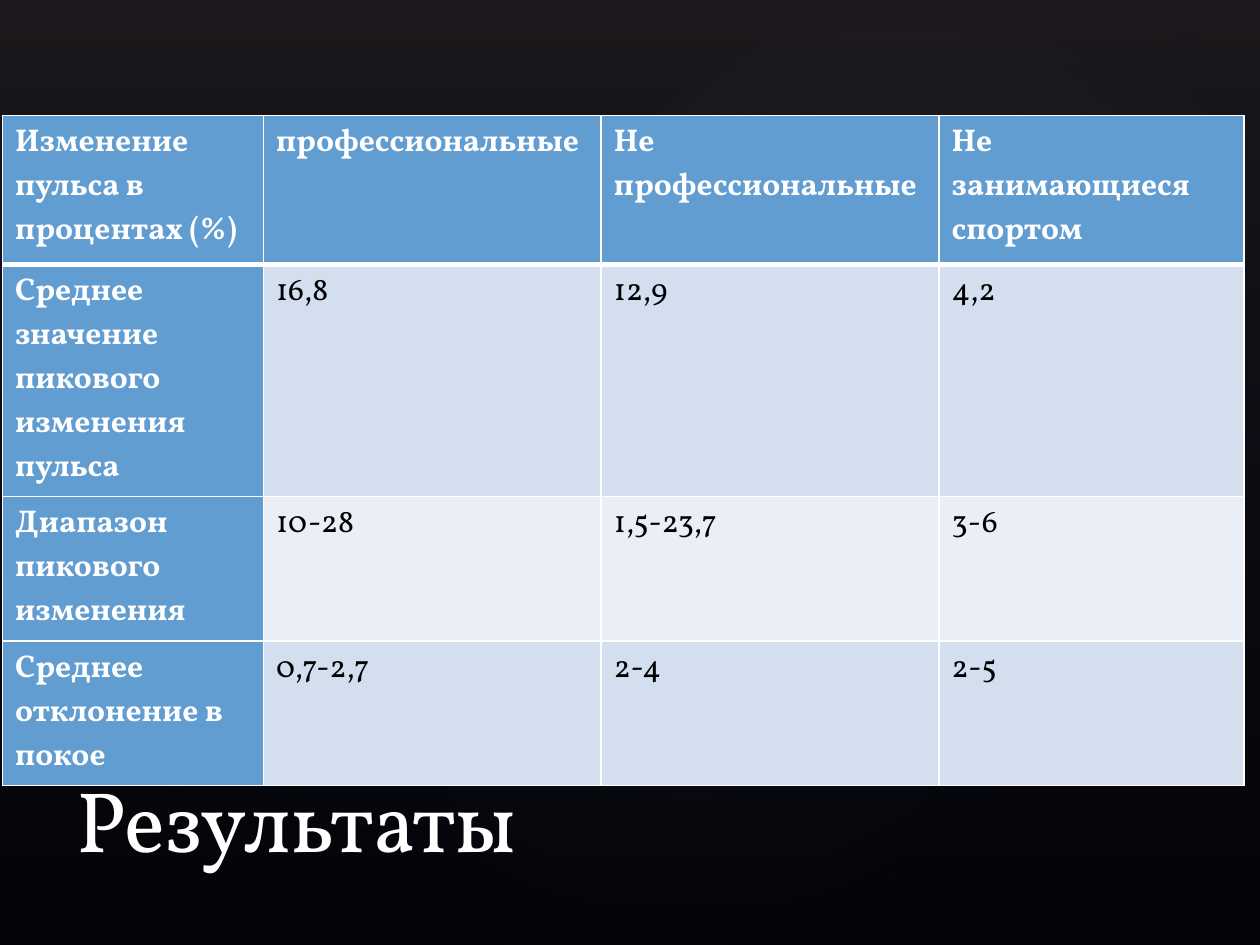
from dataclasses import dataclass

from pptx import Presentation
from pptx.dml.color import RGBColor
from pptx.enum import shapes, text
from pptx.oxml import parse_xml
from pptx.oxml.ns import nsdecls, qn
from pptx.util import Cm, Pt

FONT = "Vollkorn"
COLORS = {
    "black": "000000",
    "white": "FFFFFF",
    "haze": "504652",
    "navy": "242852",
    "glow": "C4BCC6",
    "head": "629DD1",
    "dark": "D3DFEE",
    "light": "EAEFF7",
}


@dataclass
class Stop:
    pos: int
    color: str
    alpha: int


@dataclass
class Glow:
    left: float
    top: float
    width: float
    height: float
    turn: float
    alpha: int


GLOWS = [
    Glow(3.81, 2.9, 20.12, 15.85, 328.7, 7),
    Glow(-0.76, 3.25, 15.39, 12.45, 294.3, 8),
    Glow(9.09, 0.33, 18.01, 13.21, 328.7, 8),
]
WIDTHS = [5.26, 6.81, 6.81, 6.15]
HEIGHTS = [3, 1.57, 1.57, 1.57]
ROWS = [
    ["Изменение пульса в процентах (%)", "профессиональные",
     "Не\nпрофессиональные", "Не занимающиеся спортом"],
    ["Среднее значение пикового изменения пульса", "16,8", "12,9", "4,2"],
    ["Диапазон пикового изменения", "10-28", "1,5-23,7", "3-6"],
    ["Среднее отклонение в покое", "0,7-2,7", "2-4", "2-5"],
]


def tint(name: str) -> RGBColor:
    return RGBColor.from_string(COLORS[name])


def add_text(frame, words: str, size: float, color: str, bold: bool) -> None:
    for i, line in enumerate(words.split("\n")):
        para = frame.add_paragraph() if i else frame.paragraphs[0]
        run = para.add_run()
        run.text = line
        run.font.name = FONT
        run.font.size = Pt(size)
        run.font.bold = bold
        run.font.color.rgb = tint(color)


def add_shade(slide, kind, box: list[float], stops: list[Stop], mode: str):
    shape = slide.shapes.add_shape(kind, *map(Cm, box))
    shape.shadow.inherit = False
    shape.line.fill.background()
    shape.fill.background()
    marks = "".join(
        f'<a:gs pos="{s.pos * 1000}"><a:srgbClr val="{COLORS[s.color]}">'
        f'<a:alpha val="{s.alpha * 1000}"/></a:srgbClr></a:gs>'
        for s in stops
    )
    grad = parse_xml(
        f'<a:gradFill {nsdecls("a")} rotWithShape="1">'
        f"<a:gsLst>{marks}</a:gsLst>{mode}</a:gradFill>"
    )
    props = shape.element.spPr
    props.replace(props.find(qn("a:noFill")), grad)
    return shape


def add_glow(slide, glow: Glow) -> None:
    half = 'l="50000" t="50000" r="50000" b="50000"'
    shape = add_shade(
        slide, shapes.MSO_SHAPE.OVAL,
        [glow.left, glow.top, glow.width, glow.height],
        [Stop(0, "glow", glow.alpha), Stop(58, "navy", 0)],
        f'<a:path path="circle"><a:fillToRect {half}/></a:path>',
    )
    shape.rotation = glow.turn


def add_edge(cell, side: str, width: float) -> None:
    cell._tc.get_or_add_tcPr().append(parse_xml(
        f'<a:ln{side} {nsdecls("a")} w="{Pt(width)}"><a:solidFill>'
        f'<a:srgbClr val="{COLORS["white"]}"/></a:solidFill></a:ln{side}>'
    ))


def add_grid(slide) -> None:
    frame = slide.shapes.add_table(
        len(ROWS), len(WIDTHS), Cm(0.05), Cm(2.33),
        Cm(sum(WIDTHS)), Cm(sum(HEIGHTS)))
    table = frame.table
    for col, width in zip(table.columns, WIDTHS):
        col.width = Cm(width)
    for r, words in enumerate(ROWS):
        table.rows[r].height = Cm(HEIGHTS[r])
        for c, word in enumerate(words):
            cell = table.cell(r, c)
            head = r == 0 or c == 0
            edges = {"L": 1, "R": 1, "T": 3 if r == 1 else 1,
                     "B": 3 if r == 0 else 1}
            for side, width in edges.items():
                add_edge(cell, side, width)
            cell.fill.solid()
            band = "dark" if r % 2 else "light"
            cell.fill.fore_color.rgb = tint("head" if head else band)
            add_text(cell.text_frame, word, 18,
                     "white" if head else "black", head)


def add_title(slide) -> None:
    box = slide.shapes.add_textbox(Cm(1.3), Cm(15.11), Cm(20.96), Cm(2.54))
    frame = box.text_frame
    frame.word_wrap = True
    frame.vertical_anchor = text.MSO_ANCHOR.BOTTOM
    add_text(frame, "Результаты", 49, "white", False)


def main() -> None:
    deck = Presentation()
    deck.slide_width, deck.slide_height = Cm(25.4), Cm(19.05)
    slide = deck.slides.add_slide(deck.slide_layouts[6])
    back = slide.background.fill
    back.solid()
    back.fore_color.rgb = tint("black")
    add_shade(slide, shapes.MSO_SHAPE.RECTANGLE, [0, 0, 25.4, 19.05],
              [Stop(0, "haze", 36), Stop(100, "navy", 10)],
              '<a:lin ang="5400000" scaled="0"/>')
    for glow in GLOWS:
        add_glow(slide, glow)
    add_grid(slide)
    add_title(slide)
    deck.save("out.pptx")


if __name__ == "__main__":
    main()
